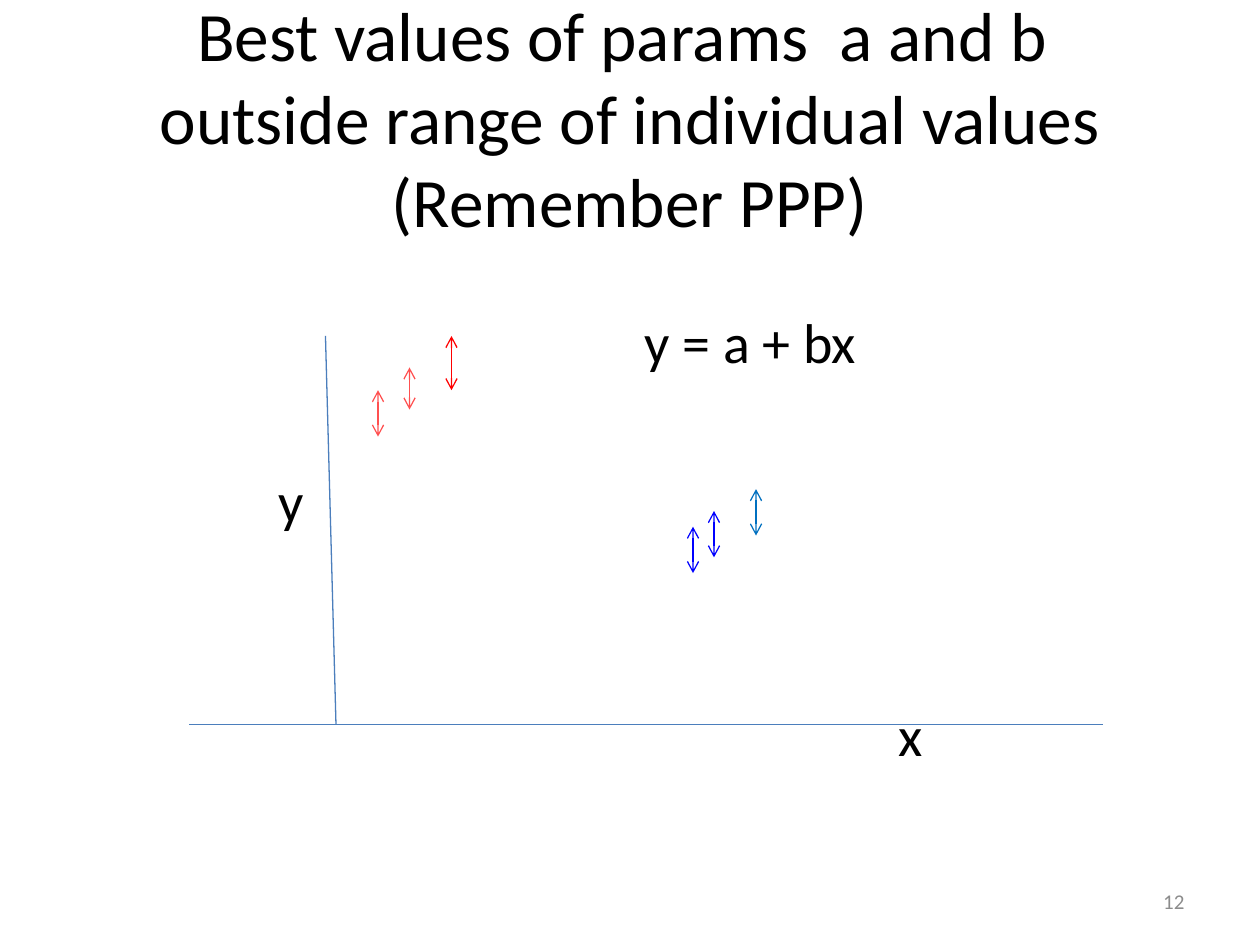
from pptx import Presentation
from pptx.dml.color import RGBColor
from pptx.enum.shapes import MSO_CONNECTOR as Connector
from pptx.enum.text import MSO_ANCHOR as Anchor, MSO_AUTO_SIZE as AutoSize, PP_ALIGN as Align
from pptx.oxml.ns import qn
from pptx.util import Pt
from lxml.etree import SubElement


def color(value):
    return RGBColor.from_string(value)


class SlideBuilder:
    font = "Calibri"
    ink = "000000"
    axis_color = "4B7EBC"
    line_width = 0.75

    def __init__(self, slide):
        self.slide = slide

    def add_run(self, paragraph, text, size, ink):
        run = paragraph.add_run()
        run.text = text
        run.font.name = self.font
        run.font.size = Pt(size)
        run.font.color.rgb = color(ink)

    def title(self, lines, left, top, width, height, size):
        shape = self.slide.shapes.title
        shape.left, shape.top = Pt(left), Pt(top)
        shape.width, shape.height = Pt(width), Pt(height)
        frame = shape.text_frame
        frame.word_wrap = True
        frame.auto_size = AutoSize.NONE
        frame.vertical_anchor = Anchor.MIDDLE
        paragraph = frame.paragraphs[0]
        paragraph.alignment = Align.CENTER
        for index, line in enumerate(lines):
            if index:
                paragraph.add_line_break()
            self.add_run(paragraph, line, size, self.ink)

    def text(self, content, left, top, width, height, size=32, ink=ink,
             align=Align.LEFT, anchor=Anchor.TOP):
        shape = self.slide.shapes.add_textbox(Pt(left), Pt(top), Pt(width), Pt(height))
        frame = shape.text_frame
        frame.word_wrap = True
        frame.vertical_anchor = anchor
        frame.margin_left = frame.margin_right = 0
        frame.margin_top = frame.margin_bottom = 0
        paragraph = frame.paragraphs[0]
        paragraph.alignment = align
        self.add_run(paragraph, content, size, ink)

    def line(self, x1, y1, x2, y2, ink=axis_color):
        connector = self.slide.shapes.add_connector(
            Connector.STRAIGHT, Pt(x1), Pt(y1), Pt(x2), Pt(y2))
        connector.line.color.rgb = color(ink)
        connector.line.width = Pt(self.line_width)
        SubElement(connector._element.spPr, qn("a:effectLst"))
        return connector

    def error_bar(self, x, top, bottom, ink):
        connector = self.line(x, top, x, bottom, ink)
        outline = connector.line._get_or_add_ln()
        for end in ("a:headEnd", "a:tailEnd"):
            SubElement(outline, qn(end), type="arrow")


def main():
    presentation = Presentation()
    presentation.slide_width, presentation.slide_height = Pt(720), Pt(540)
    slide = presentation.slides.add_slide(presentation.slide_layouts[5])
    builder = SlideBuilder(slide)

    builder.title(
        ["Best values of params  a and b ", "outside range of individual values", "(Remember PPP)"],
        36, 21.6, 648, 90, 39.6)

    for content, left, top, width in (
        ("y = a + bx", 368.5, 176, 160),
        ("y", 159, 266.5, 24),
        ("x", 513.5, 400.5, 24),
    ):
        builder.text(content, left, top, width, 39)
    builder.text("12", 516, 500.5, 160.8, 28.8, 12, "8C8C8C", Align.RIGHT, Anchor.MIDDLE)

    builder.line(186, 192, 192, 414)
    builder.line(108, 414, 630, 414)

    for x, top, bottom, ink in (
        (234, 210, 234, "FF5050"),
        (258, 192, 223, "FF0000"),
        (216, 223, 249.5, "FF5050"),
        (396, 301, 327.5, "0000FF"),
        (408, 292, 318.5, "0000FF"),
        (432, 279.5, 306, "0070C0"),
    ):
        builder.error_bar(x, top, bottom, ink)

    presentation.save("out.pptx")


if __name__ == "__main__":
    main()
